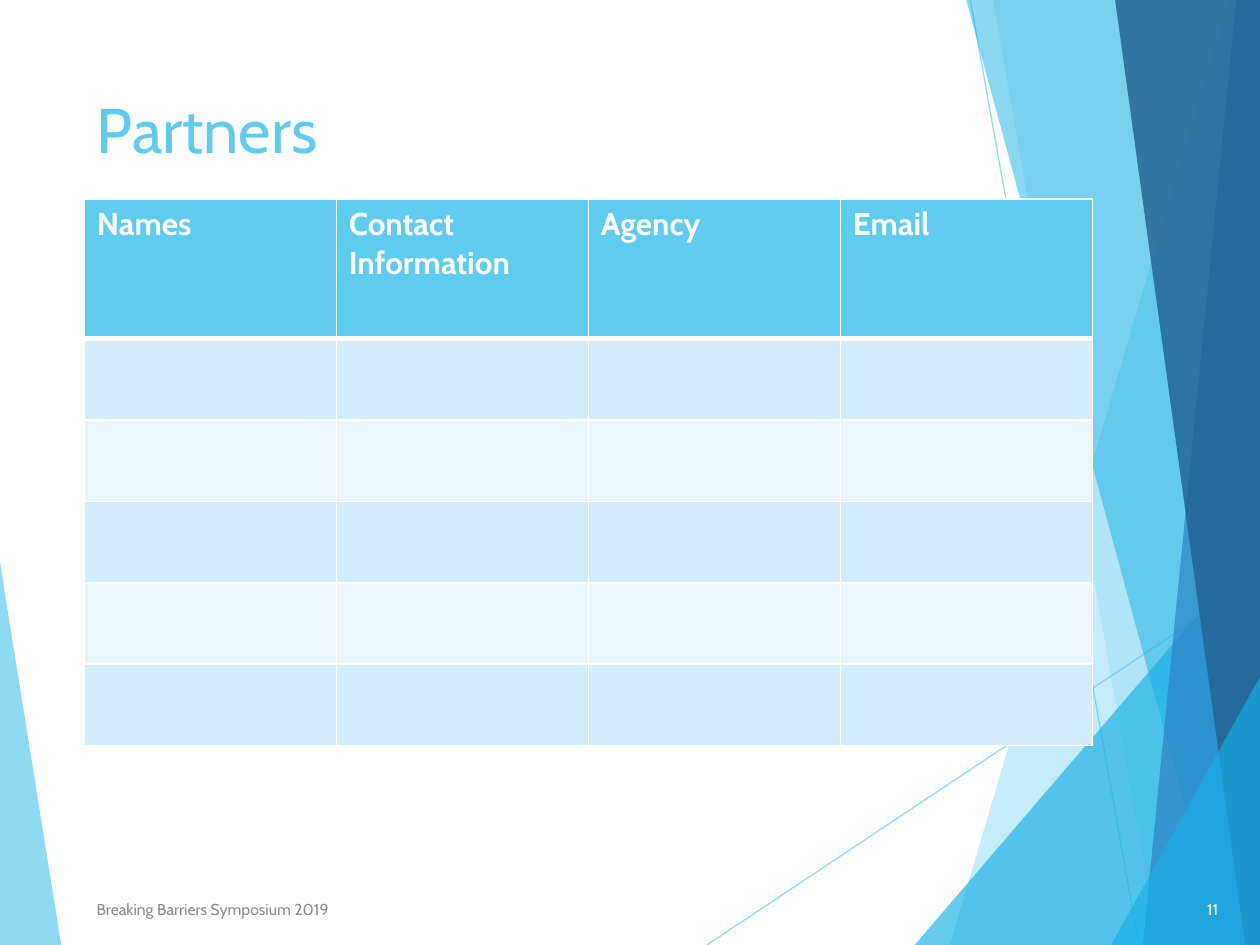
import pptx
import pptx.dml.color
import pptx.enum.shapes
import pptx.enum.text
import pptx.oxml
import pptx.oxml.ns
import pptx.util

Cm = pptx.util.Cm
Pt = pptx.util.Pt
RGBColor = pptx.dml.color.RGBColor
Align = pptx.enum.text.PP_ALIGN
Anchor = pptx.enum.text.MSO_ANCHOR

SKY = RGBColor(0x5F, 0xCB, 0xEF)
CYAN = RGBColor(0x17, 0xB0, 0xE4)
BLUE = RGBColor(0x2E, 0x83, 0xC3)
NAVY = RGBColor(0x22, 0x62, 0x92)
WHITE = RGBColor(0xFF, 0xFF, 0xFF)
GREY = RGBColor(0x8C, 0x8C, 0x8C)
BANDS = RGBColor(0xD2, 0xEC, 0xF9), RGBColor(0xEA, 0xF6, 0xFC)
FONT = "Cabin"

TITLE = "Partners"
HEADERS = ["Names", "Contact Information", "Agency", "Email"]
PARTNER_ROWS = 5
FOOTER = "Breaking Barriers Symposium 2019"
PAGE = "11"

BOTTOM, RIGHT = 19.05, 25.43
LEFT_WING = [(-0.03, 11.15), (1.24, 19.08), (-0.03, BOTTOM)]
RAYS = [((14.25, BOTTOM), (RIGHT, 11.61)), ((19.56, 0), (22.96, BOTTOM))]
RIGHT_BANDS = [
    (24.77, 19.15, 0, SKY, 36),
    (20.02, 23.34, 0, SKY, 20),
    (RIGHT, 18.44, 10.9, CYAN, 66),
    (19.48, 24.64, 0, CYAN, 50),
    (24.92, 23.04, 0, BLUE, 70),
    (22.48, 25.1, 0, NAVY, 82),
    (RIGHT, 22.4, 13.59, CYAN, 66),
]

MARGIN = 1.7
TABLE_TOP = 4.01
COLUMN_WIDTH = 5.08
HEADER_HEIGHT, ROW_HEIGHT = 2.82, 1.64


def set_alpha(fill_parent, percent):
    for color in fill_parent.iter(pptx.oxml.ns.qn("a:srgbClr")):
        alpha = pptx.oxml.parse_xml(
            f'<a:alpha {pptx.oxml.ns.nsdecls("a")} val="{percent * 1000}"/>')
        color.append(alpha)


def add_facet(slide, points, color, opacity):
    start, *rest = [(Cm(x), Cm(y)) for x, y in points]
    outline = slide.shapes.build_freeform(*start, scale=1.0)
    outline.add_line_segments(rest, close=True)
    facet = outline.convert_to_shape()
    facet.shadow.inherit = False
    facet.fill.solid()
    facet.fill.fore_color.rgb = color
    facet.line.fill.background()
    set_alpha(facet.fill._xPr, opacity)


def add_ray(slide, start, end):
    ray = slide.shapes.add_connector(
        pptx.enum.shapes.MSO_CONNECTOR.STRAIGHT, *map(Cm, start + end))
    ray.line.color.rgb = SKY
    ray.line.width = Pt(0.75)
    properties = ray._element.spPr
    set_alpha(properties, 70)
    properties.append(pptx.oxml.parse_xml(
        f'<a:effectLst {pptx.oxml.ns.nsdecls("a")}/>'))


def style(paragraph, size, color, bold=False, align=Align.LEFT):
    paragraph.alignment = align
    paragraph.font.name = FONT
    paragraph.font.size = Pt(size)
    paragraph.font.bold = bold
    paragraph.font.color.rgb = color


def set_borders(cell, bottom):
    widths = {"lnL": 1, "lnR": 1, "lnT": 1, "lnB": bottom}
    properties = cell._tc.get_or_add_tcPr()
    for position, (side, width) in enumerate(widths.items()):
        properties.insert(position, pptx.oxml.parse_xml(
            f'<a:{side} {pptx.oxml.ns.nsdecls("a")} w="{Pt(width)}"><a:solidFill>'
            f'<a:srgbClr val="{WHITE}"/></a:solidFill></a:{side}>'))


def add_backdrop(slide):
    add_facet(slide, LEFT_WING, SKY, 70)
    for start, end in RAYS:
        add_ray(slide, start, end)
    for top_x, bottom_x, top, color, opacity in RIGHT_BANDS:
        points = [(top_x, top), (bottom_x, BOTTOM), (RIGHT, BOTTOM)]
        if top_x != RIGHT:
            points.append((RIGHT, top))
        add_facet(slide, points, color, opacity)


def add_title(slide):
    title = slide.shapes.title
    title.left, title.top, title.width, title.height = map(
        Cm, (MARGIN, 1.7, 17.63, 2.01))
    title.text_frame.text = TITLE
    title.text_frame.vertical_anchor = Anchor.TOP
    style(title.text_frame.paragraphs[0], 36, SKY)


def add_partner_table(slide):
    columns = len(HEADERS)
    partners = slide.shapes.add_table(
        PARTNER_ROWS + 1, columns, Cm(MARGIN), Cm(TABLE_TOP),
        Cm(COLUMN_WIDTH * columns),
        Cm(HEADER_HEIGHT + ROW_HEIGHT * PARTNER_ROWS)).table
    for column in partners.columns:
        column.width = Cm(COLUMN_WIDTH)
    for index, row in enumerate(partners.rows):
        is_header = index == 0
        row.height = Cm(HEADER_HEIGHT if is_header else ROW_HEIGHT)
        for cell, header in zip(row.cells, HEADERS):
            cell.fill.solid()
            cell.fill.fore_color.rgb = SKY if is_header else BANDS[(index - 1) % 2]
            set_borders(cell, 3 if is_header else 1)
            if is_header:
                cell.text = header
                style(cell.text_frame.paragraphs[0], 18, WHITE, bold=True)


def add_footer_text(slide, text, left, width, color, align):
    footer = slide.shapes.add_textbox(Cm(left), Cm(17.81), Cm(width), Cm(1.02))
    footer.text_frame.word_wrap = True
    footer.text_frame.vertical_anchor = Anchor.MIDDLE
    footer.text_frame.text = text
    style(footer.text_frame.paragraphs[0], 9, color, align=align)


def main():
    deck = pptx.Presentation()
    deck.slide_width, deck.slide_height = Cm(25.4), Cm(19.05)
    slide = deck.slides.add_slide(deck.slide_layouts[5])
    add_backdrop(slide)
    add_title(slide)
    add_partner_table(slide)
    add_footer_text(slide, FOOTER, MARGIN, 12.85, GREY, Align.LEFT)
    add_footer_text(slide, PAGE, 23.39, 1.42, WHITE, Align.RIGHT)
    deck.save("out.pptx")


if __name__ == "__main__":
    main()
